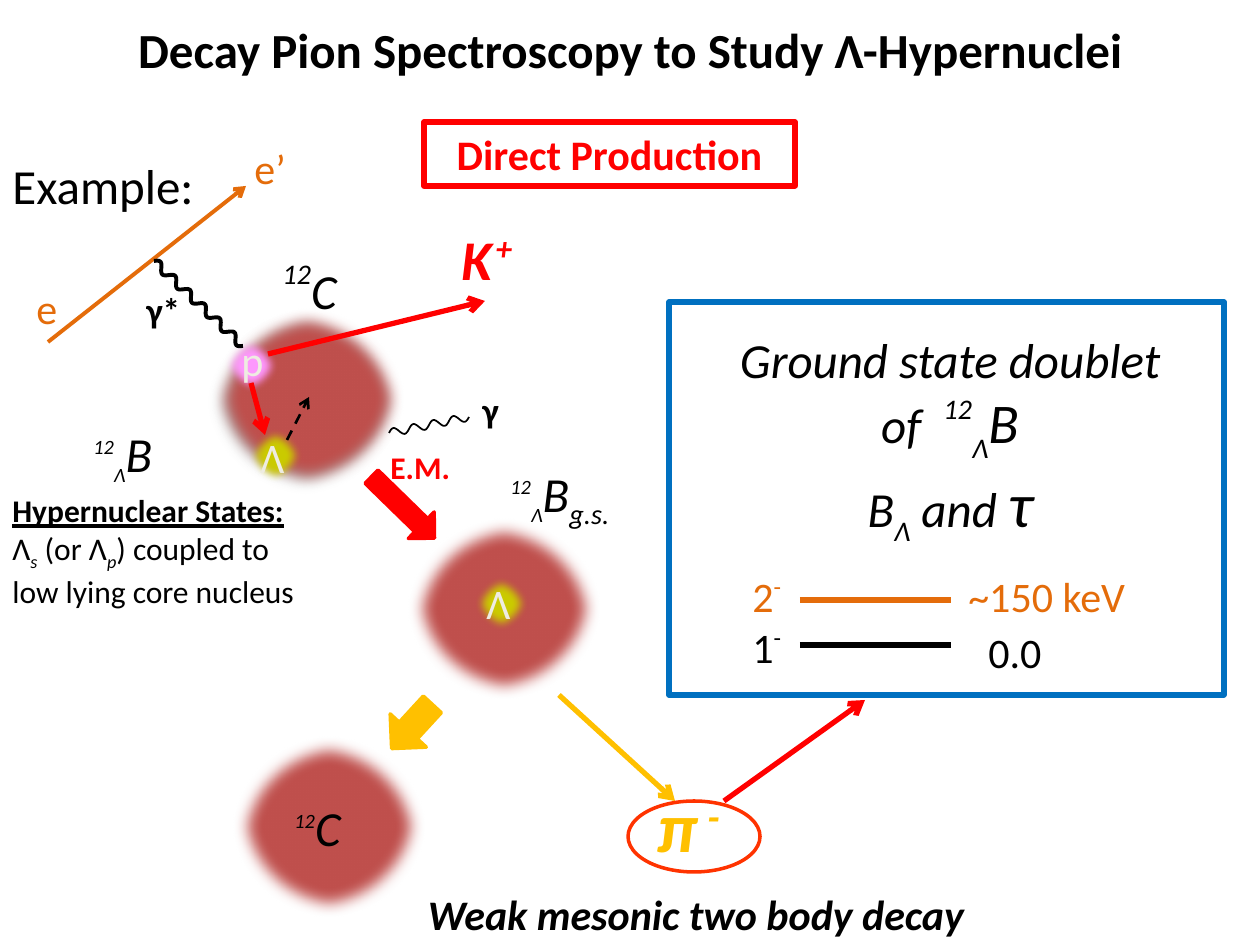
from dataclasses import dataclass
from math import hypot, pi, sin

from lxml.etree import SubElement
from pptx import Presentation
from pptx.dml.color import RGBColor
from pptx.enum.dml import MSO_LINE
from pptx.enum.shapes import MSO_CONNECTOR, MSO_SHAPE
from pptx.enum.text import MSO_ANCHOR, MSO_AUTO_SIZE, PP_ALIGN
from pptx.oxml.ns import qn
from pptx.util import Pt

PX = 914400 / 126  # EMU per px


def emu(*values):
    return [round(v * PX) for v in values]


@dataclass(frozen=True)
class Theme:
    font: str = "Calibri"
    black: str = "000000"
    white: str = "FFFFFF"
    pale: str = "EEECE1"
    red: str = "FF0000"
    ring: str = "FF3300"
    orange: str = "E46C0A"
    amber: str = "FFC000"
    blue: str = "0070C0"
    navy: str = "17375E"
    nucleus: str = "C0504D"
    proton: str = "FF99FF"
    hyperon: str = "CCCC00"
    thin_gap: int = 10
    gap: int = 12
    small: int = 18
    label: int = 20
    body: int = 24
    head: int = 28
    big: int = 32
    tau: int = 36
    pion: int = 40


class Board:
    """Holds the theme and the slide being drawn."""

    def __init__(self, s, theme):
        self.s, self.t = s, theme

    def fill_text(self, tf, paragraphs, color, align):
        """Each paragraph is a list of (text, size, style letters, baseline %)."""
        tf.word_wrap = True
        tf.auto_size = MSO_AUTO_SIZE.SHAPE_TO_FIT_TEXT
        for i, runs in enumerate(paragraphs):
            p = tf.add_paragraph() if i else tf.paragraphs[0]
            p.alignment = align
            for text, size, style, base in runs:
                r = p.add_run()
                r.text = text
                f = r.font
                f.name, f.size = self.t.font, Pt(size)
                f.color.rgb = RGBColor.from_string(color)
                f.bold, f.italic, f.underline = (c in style for c in "biu")
                if base:
                    f._element.set("baseline", str(base * 1000))

    def text(self, box, *paragraphs, color=Theme.black, align=PP_ALIGN.LEFT):
        sp = self.s.shapes.add_textbox(*emu(*box))
        self.fill_text(sp.text_frame, paragraphs, color, align)
        return sp

    def label(self, box, text, size, style="", **kw):
        return self.text(box, [(text, size, style, 0)], **kw)

    def shape(self, kind, box, fill=None, line=None, width=2, rot=0):
        sp = self.s.shapes.add_shape(kind, *emu(*box))
        sp.rotation = rot
        sp.shadow.inherit = False
        if fill:
            sp.fill.solid()
            sp.fill.fore_color.rgb = RGBColor.from_string(fill)
        else:
            sp.fill.background()
        self.stroke(sp, line or fill, width)
        return sp

    def ball(self, x, y, w, h, fill, line=None, soft=63500, shadow=False):
        """Ellipse with a soft edge and, if asked, a drop shadow."""
        sp = self.shape(MSO_SHAPE.OVAL, (x, y, w, h), fill, line)
        effects = sp.element.spPr.find(qn("a:effectLst"))
        if shadow:
            drop = SubElement(effects, qn("a:outerShdw"), blurRad="50800", dist="38100",
                              dir="8100000", algn="tr", rotWithShape="0")
            clr = SubElement(drop, qn("a:srgbClr"), val=self.t.black)
            SubElement(clr, qn("a:alpha"), val="40000")
        SubElement(effects, qn("a:softEdge"), rad=str(soft))

    def nucleus(self, x, y, shadow=False):
        self.ball(x, y, 192, 181, self.t.nucleus, self.t.navy, 112500, shadow)

    def particle(self, x, y, fill):
        self.ball(x, y, 55, 55, fill)

    def stroke(self, sp, color, width):
        sp.line.color.rgb = RGBColor.from_string(color)
        sp.line.width = Pt(width)

    def line(self, start, end, color, width=3, arrow=True, dash=False):
        c = self.s.shapes.add_connector(MSO_CONNECTOR.STRAIGHT, *emu(*start, *end))
        self.stroke(c, color, width)
        if dash:
            c.line.dash_style = MSO_LINE.DASH
        spPr = c.element.spPr
        if arrow:
            SubElement(spPr.find(qn("a:ln")), qn("a:tailEnd"), type="arrow")
        SubElement(spPr, qn("a:effectLst"))

    def wave(self, start, end, periods, width, amp=4, steps=16):
        """Photon: a sine curve along the line from start to end."""
        (x, y), fine = start, 100
        dx, dy = end[0] - x, end[1] - y
        length, n = hypot(dx, dy), periods * steps
        points = []
        for i in range(n + 1):
            u, v = i / n, amp * sin(2 * pi * i / steps) / length
            points.append((fine * (x + u * dx + v * dy), fine * (y + u * dy - v * dx)))
        fb = self.s.shapes.build_freeform(*points[0], scale=PX / fine)
        fb.add_line_segments(points[1:], close=False)
        sp = fb.convert_to_shape()
        sp.shadow.inherit = False
        sp.fill.background()
        self.stroke(sp, self.t.black, width)


def main():
    prs = Presentation()
    prs.slide_width, prs.slide_height = emu(1260, 945)
    t = Theme()
    b = Board(prs.slides.add_slide(prs.slide_layouts[6]), t)
    mid = PP_ALIGN.CENTER
    boron = [("12", t.label, "i", 50), ("Λ", t.label, "i", -30), ("B", t.head, "i", 0)]

    # Title
    title = b.label((0, 0, 1260, 98), "Decay Pion Spectroscopy to Study Λ-Hypernuclei",
                    t.head, "b", align=mid)
    title.text_frame.auto_size = MSO_AUTO_SIZE.NONE
    title.text_frame.vertical_anchor = MSO_ANCHOR.MIDDLE

    # Weak decay: residual carbon and pion
    b.nucleus(233, 736)
    b.shape(MSO_SHAPE.RIGHT_ARROW, (382, 702, 60, 49), t.amber, rot=132.6)
    b.text((282, 791, 93, 72), [("12", t.label, "i", 50), ("C", t.head, "i", 0)])
    b.line((559, 695), (675, 801), t.amber)
    b.text((645, 776, 126, 97), [("π", t.pion, "bi", 0), ("  ", t.gap, "bi", 0),
                                 ("-", t.pion, "bi", 30)], color=t.amber)
    b.label((378, 882, 636, 63), "Weak mesonic two body decay", t.body, "bi", align=mid)

    # Ground state doublet: levels 2- and 1-
    levels = [("2", 600, 564, "~150 keV", (956, 564, 237, 63), t.orange),
              ("1", 645, 615, "0.0", (976, 620, 101, 63), t.black)]
    for spin, y, top, energy, box, color in levels:
        b.line((800, y), (951, y), color, arrow=False)
        b.text((740, top, 86, 63), [(spin, t.body, "", 0), ("-", t.body, "", 40)], color=color)
        b.label(box, energy, t.body, color=color)
    b.text((719, 323, 462, 217),
           [("Ground state doublet of  ", t.head, "i", 0), ("12", t.head, "i", 50),
            ("Λ", t.head, "i", -30), ("B", t.big, "i", 0)],
           [("B", t.head, "i", 0), ("Λ", t.head, "i", -30), (" and ", t.head, "i", 0),
            ("τ", t.tau, "i", 0)], align=mid)
    b.shape(MSO_SHAPE.RECTANGLE, (669, 302, 555, 393), line=t.blue, width=3)
    b.shape(MSO_SHAPE.OVAL, (628, 801, 132, 71), line=t.ring)
    b.line((724, 801), (865, 700), t.red)

    # Heading box
    box = b.shape(MSO_SHAPE.RECTANGLE, (424, 122, 371, 64), t.white, t.red, 3)
    b.fill_text(box.text_frame, [[("Direct Production", t.body, "b", 0)]], t.red, mid)

    # Electroproduction on carbon
    b.nucleus(212, 308, shadow=True)
    b.particle(224, 338, t.proton)
    b.label((229, 328, 66, 63), "p", t.body, color=t.pale)
    b.line((48, 342), (246, 186), t.orange, 2.25)
    b.wave((154, 261), (243, 346), 6, 2.25)
    b.label((242, 136, 67, 64), "e’", t.body, color=t.orange)
    b.label((24, 276, 66, 63), "e", t.body, color=t.orange)
    b.text((270, 250, 98, 72), [("12", t.head, "i", 50), ("C", t.head, "i", 0)])
    b.text((449, 218, 91, 81), [("K", t.big, "bi", 0), (" ", t.thin_gap, "bi", 0),
                                ("+", t.big, "bi", 36)], color=t.red)
    b.line((268, 354), (485, 301), t.red)
    b.label((0, 149, 210, 72), "Example:", t.head)
    b.particle(248, 428, t.hyperon)
    b.label((248, 425, 66, 63), "Λ", t.body, color=t.pale)
    b.line((251, 383), (265, 435), t.red)
    b.line((287, 440), (309, 397), t.black, 1.5, dash=True)
    b.text((0, 485, 321, 127), [("Hypernuclear States:", t.small, "bu", 0)],
           [("Λ", t.small, "", 0), ("s", t.small, "i", -25), (" (or Λ", t.small, "", 0),
            ("p", t.small, "i", -25), (") coupled to low lying core nucleus", t.small, "", 0)])

    # Electromagnetic transition to the ground state
    b.shape(MSO_SHAPE.RIGHT_ARROW, (359, 489, 88, 37), t.red, rot=44.3)
    b.nucleus(408, 518)
    b.particle(474, 576, t.hyperon)
    b.label((474, 571, 66, 63), "Λ", t.body, color=t.pale)
    b.text((498, 457, 146, 72), boron + [("g.s.", t.head, "i", -25)])
    b.label((378, 442, 98, 50), "E.M.", t.small, "b", color=t.red)
    b.wave((389, 433), (469, 417), 4, 1)
    b.label((470, 382, 53, 55), "γ", t.label, "b")

    # Virtual photon and hypernucleus labels
    b.label((134, 282, 74, 55), "γ*", t.label, "b")
    b.text((81, 417, 102, 72), boron)

    prs.save("out.pptx")


if __name__ == "__main__":
    main()
